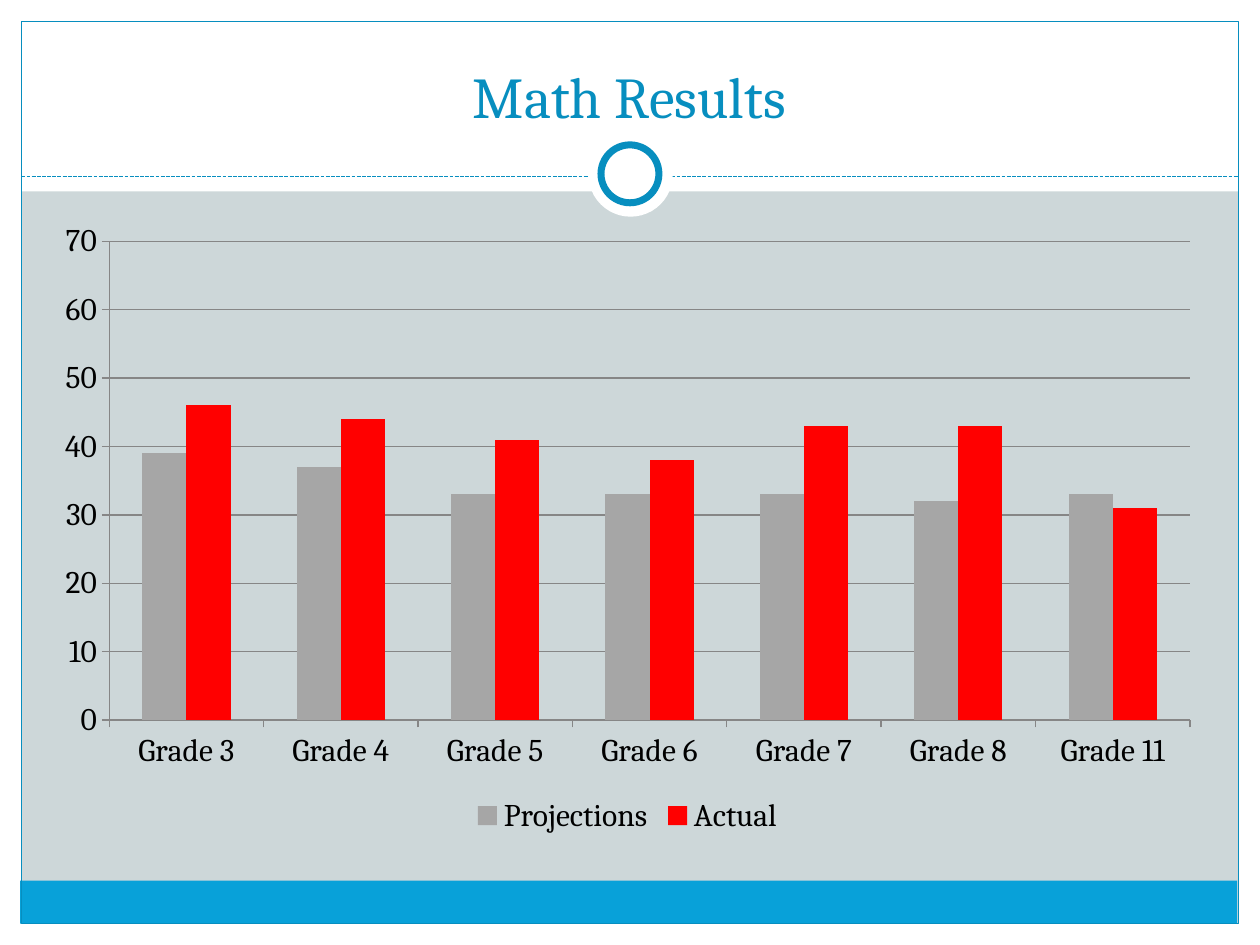
from dataclasses import dataclass
from pptx import Presentation
from pptx.chart.data import CategoryChartData as ChartData
from pptx.dml.color import RGBColor as RGB
from pptx.enum.chart import XL_CHART_TYPE as Kind, XL_LEGEND_POSITION as Spot, XL_TICK_MARK as Tick
from pptx.enum.dml import MSO_LINE as Dash
from pptx.enum.shapes import MSO_CONNECTOR as Link, MSO_SHAPE as Form
from pptx.enum.text import MSO_ANCHOR as Anchor, PP_ALIGN as Align
from pptx.oxml.ns import qn
from pptx.util import Inches, Pt


@dataclass
class Theme:
    font: str = "Cambria"
    back: RGB = RGB.from_string("CDD7D9")
    white: RGB = RGB.from_string("FFFFFF")
    band: RGB = RGB.from_string("08A1D9")
    blue: RGB = RGB.from_string("078EBF")
    black: RGB = RGB.from_string("000000")
    axis: RGB = RGB.from_string("868686")
    gray: RGB = RGB.from_string("A6A6A6")
    red: RGB = RGB.from_string("FF0000")
    title: Pt = Pt(33)
    label: Pt = Pt(18)
    thin: Pt = Pt(0.75)
    thick: Pt = Pt(4)


theme = Theme()
deck = Presentation()
deck.slide_width, deck.slide_height = Inches(10), Inches(7.5)
slide = deck.slides.add_slide(deck.slide_layouts[5])
slide.background.fill.solid()
slide.background.fill.fore_color.rgb = theme.back
shapes = slide.shapes


def add_form(form, box, fill=None, width=None):
    shape = shapes.add_shape(form, *map(Inches, box))
    shape.shadow.inherit = False
    if fill is None:
        shape.fill.background()
    else:
        shape.fill.solid()
        shape.fill.fore_color.rgb = fill
    if width is None:
        shape.line.fill.background()
    else:
        shape.line.color.rgb = theme.blue
        shape.line.width = width


for edge in [(0, 7.33, 10, 0.17), (0, 0, 10, 1.52), (0, 0, 0.17, 7.5), (9.83, 0, 0.17, 7.5)]:
    add_form(Form.RECTANGLE, edge, theme.white)
add_form(Form.RECTANGLE, (0.16, 6.99, 9.66, 0.34), theme.band)
add_form(Form.RECTANGLE, (0.17, 0.17, 9.66, 7.16), width=theme.thin)

rule = shapes.add_connector(Link.STRAIGHT, Inches(0.17), Inches(1.4), Inches(9.83), Inches(1.4))
rule.line.color.rgb = theme.blue
rule.line.width = theme.thin
rule.line.dash_style = Dash.SQUARE_DOT
props = rule._element.spPr
props.append(props.makeelement(qn("a:effectLst"), {}))

add_form(Form.OVAL, (4.67, 1.05, 0.67, 0.67), theme.white)
add_form(Form.OVAL, (4.77, 1.15, 0.46, 0.46), theme.white, theme.thick)

title = shapes.title
title.left, title.top, title.width, title.height = map(Inches, (0.33, 0.25, 9.33, 0.83))
frame = title.text_frame
frame.text = "Math Results"
frame.vertical_anchor = Anchor.BOTTOM
para = frame.paragraphs[0]
para.alignment = Align.CENTER
font = para.runs[0].font
font.name, font.size, font.color.rgb = theme.font, theme.title, theme.blue
shapes._spTree.append(title._element)

data = ChartData()
data.categories = [f"Grade {grade}" for grade in (3, 4, 5, 6, 7, 8, 11)]
data.add_series("Projections", (39, 37, 33, 33, 33, 32, 33))
data.add_series("Actual", (46, 44, 41, 38, 43, 43, 31))
box = map(Inches, (0.33, 1.67, 9.3, 5))
chart = shapes.add_chart(Kind.COLUMN_CLUSTERED, *box, data).chart
chart.has_title = False
chart.font.name, chart.font.size = theme.font, theme.label
chart.font.color.rgb = theme.black
chart.has_legend = True
chart.legend.position = Spot.BOTTOM
chart.legend.include_in_layout = False

plot = chart.plots[0]
plot.gap_width = 150
plot.overlap = 0
plot.vary_by_categories = False
for series, color in zip(plot.series, (theme.gray, theme.red)):
    series.format.fill.solid()
    series.format.fill.fore_color.rgb = color

scale = chart.value_axis
scale.minimum_scale, scale.maximum_scale, scale.major_unit = 0, 70, 10
scale.has_major_gridlines = True
for axis in (scale, chart.category_axis):
    axis.major_tick_mark = Tick.OUTSIDE
for part in (scale, chart.category_axis, scale.major_gridlines):
    part.format.line.color.rgb = theme.axis
    part.format.line.width = theme.thin

deck.save("out.pptx")
